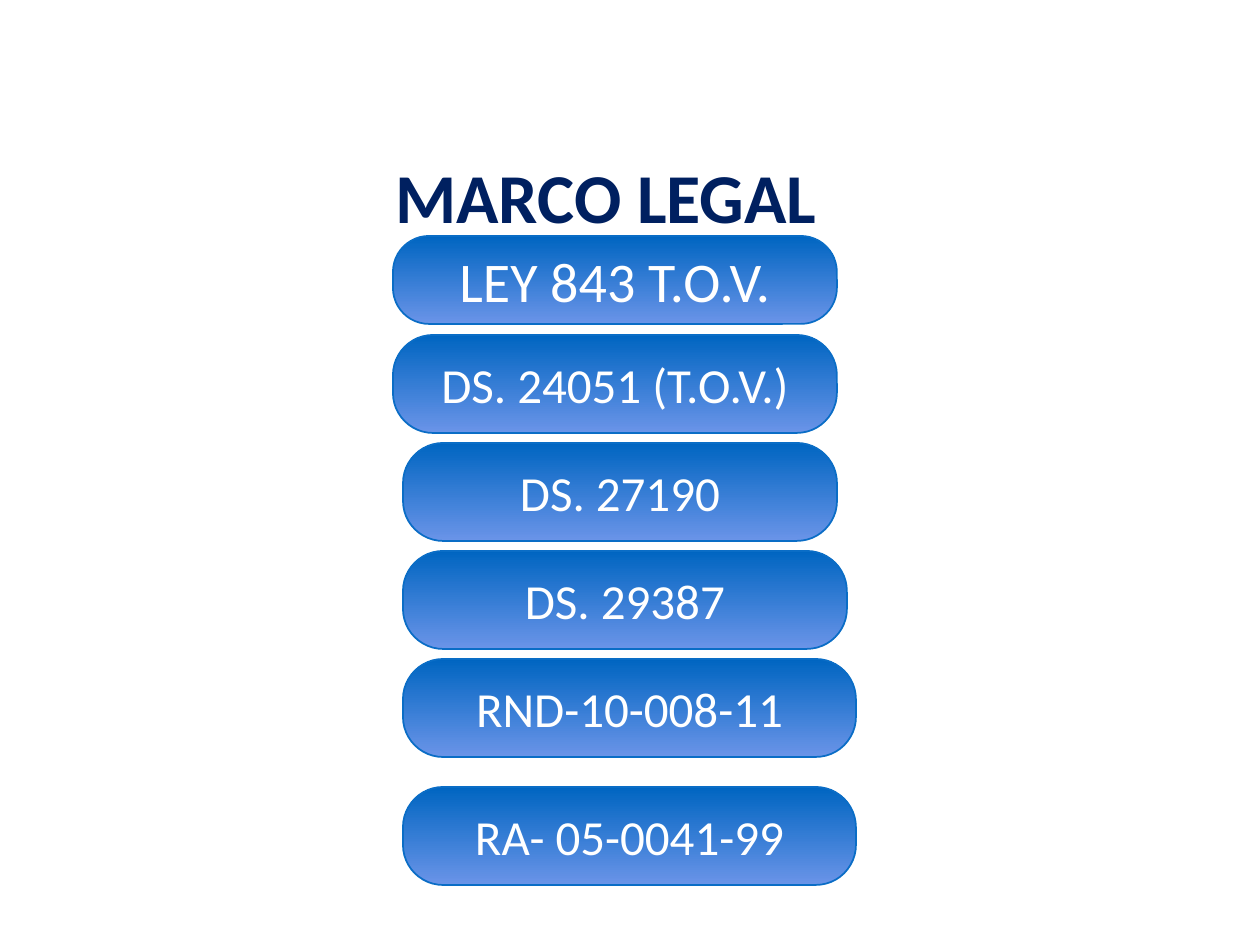
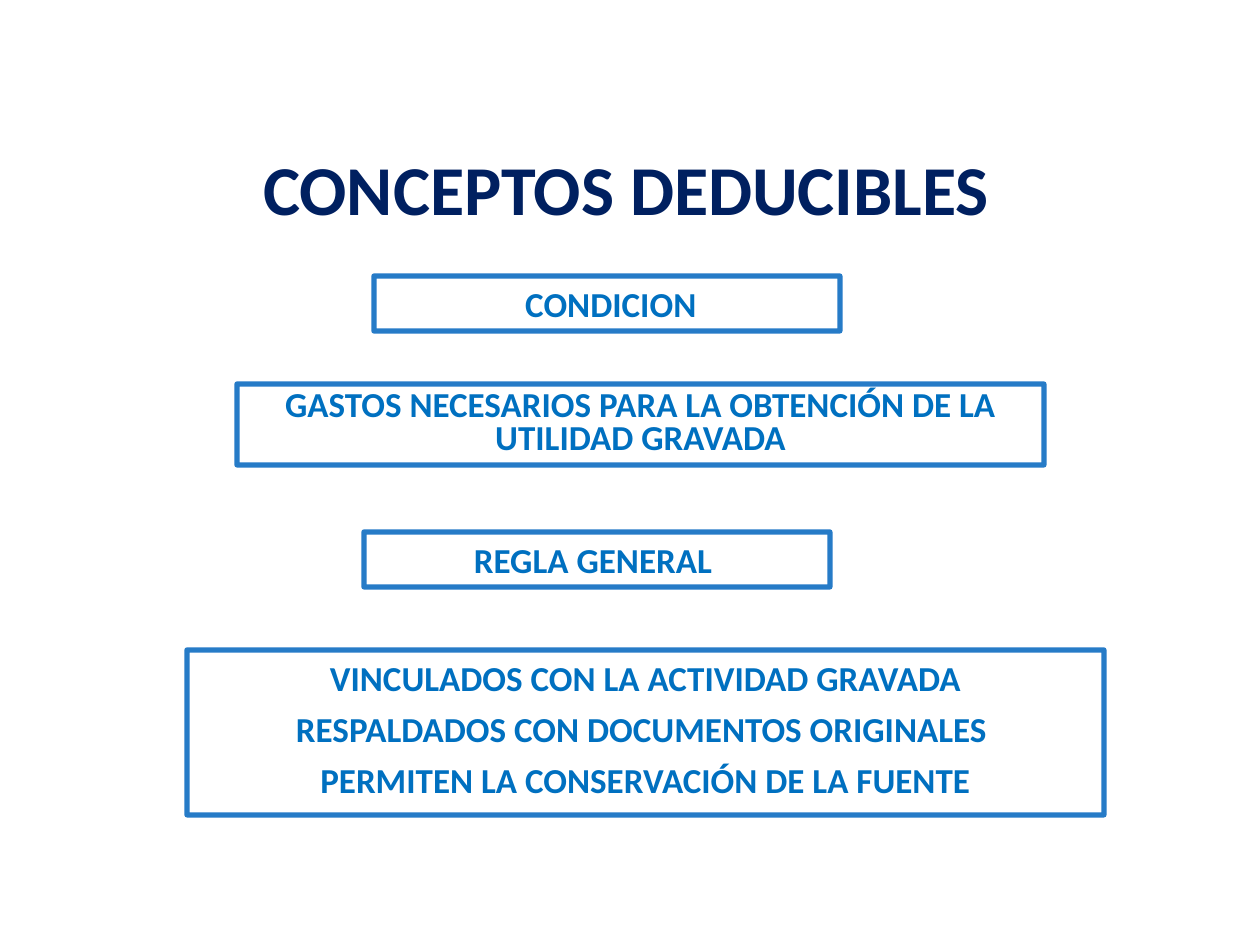
from pptx import Presentation
from pptx import util as u
from pptx.dml.color import RGBColor
from pptx.enum import shapes, text
from pptx.oxml.ns import qn
from lxml import etree

PX = 914400 / 126
FONT = "Calibri"
WHITE = "FFFFFF"
NAVY = "002060"
TEXT_BLUE = "0070C0"
FRAME_BLUE = "0F6DC2"
PILL_EDGE = "0A6DC6"
PILL_GRADIENT = ("6A94E8", "0065C1")


def px(length):
    return u.Emu(round(length * PX))


def color(value):
    return RGBColor.from_string(value)


class Deck:
    def __init__(self):
        self.presentation = Presentation()
        self.presentation.slide_width = px(1260)
        self.presentation.slide_height = px(945)
        self.slide = None

    def new_slide(self):
        layout = self.presentation.slide_layouts[6]
        self.slide = self.presentation.slides.add_slide(layout)

    def set_text(self, shape, lines, size, ink, bold=False, wrap=True,
                 anchor=text.MSO_ANCHOR.TOP):
        frame = shape.text_frame
        frame.text = "\n".join(lines)
        frame.word_wrap = wrap
        frame.vertical_anchor = anchor
        for paragraph in frame.paragraphs:
            paragraph.alignment = text.PP_ALIGN.CENTER
            for run in paragraph.runs:
                run.font.name = FONT
                run.font.size = u.Pt(size)
                run.font.bold = bold
                run.font.color.rgb = color(ink)
        return frame.paragraphs

    def add_box(self, kind, left, top, width, height, edge, weight):
        shape = self.slide.shapes.add_shape(
            kind, px(left), px(top), px(width), px(height))
        shape.shadow.inherit = False
        shape.line.color.rgb = color(edge)
        shape.line.width = u.Pt(weight)
        return shape

    def title(self, title, left, top, width):
        shape = self.slide.shapes.add_textbox(
            px(left), px(top), px(width), px(97))
        self.set_text(shape, [title], 40, NAVY, bold=True)

    def pill(self, label, left, top, width, height=98, size=28):
        shape = self.add_box(shapes.MSO_SHAPE.ROUNDED_RECTANGLE,
                             left, top, width, height, PILL_EDGE, 1)
        shape.adjustments[0] = 0.41
        shape.fill.gradient()
        shape.fill.gradient_angle = 90
        for position, stop in enumerate(shape.fill.gradient_stops):
            stop.position = position
            stop.color.rgb = color(PILL_GRADIENT[position])
        self.set_text(shape, [label], size, WHITE, wrap=False,
                      anchor=text.MSO_ANCHOR.MIDDLE)

    def frame(self, lines, left, top, width, height, tight_from=1):
        shape = self.add_box(shapes.MSO_SHAPE.RECTANGLE,
                             left, top, width, height, FRAME_BLUE, 3)
        shape.fill.solid()
        shape.fill.fore_color.rgb = color(WHITE)
        edge = shape.element.spPr.find(
            "/".join(qn(tag) for tag in ("a:ln", "a:solidFill", "a:srgbClr")))
        etree.SubElement(edge, qn("a:alpha")).set("val", "90000")
        paragraphs = self.set_text(shape, lines, 20, TEXT_BLUE, bold=True)
        for paragraph in paragraphs[tight_from:]:
            paragraph.line_spacing = 0.8
        for paragraph in paragraphs[1:]:
            paragraph.space_before = u.Pt(10)


def legal_framework(deck):
    deck.new_slide()
    deck.pill("LEY 843 T.O.V.", 393, 236, 444, height=88, size=32)
    deck.title("MARCO LEGAL", 335, 147, 542)
    decrees = [
        ("DS. 24051 (T.O.V.)", 393, 444),
        ("DS. 27190", 403, 434),
        ("DS. 29387", 403, 444),
        ("RND-10-008-11", 403, 453),
    ]
    for row, (label, left, width) in enumerate(decrees):
        deck.pill(label, left, 335 + 108 * row, width)
    deck.pill("RA- 05-0041-99", 403, 787, 453)


def deductible_items(deck):
    deck.new_slide()
    deck.frame(["REGLA GENERAL "], 364, 532, 466, 55)
    deck.frame(["GASTOS NECESARIOS PARA LA OBTENCIÓN DE LA UTILIDAD GRAVADA"],
               237, 384, 807, 81, tight_from=0)
    deck.frame([" CONDICION"], 374, 276, 466, 55)
    deck.frame(["VINCULADOS CON LA ACTIVIDAD GRAVADA",
                "RESPALDADOS CON DOCUMENTOS ORIGINALES ",
                "PERMITEN LA CONSERVACIÓN DE LA FUENTE"],
               187, 650, 917, 165)
    deck.title("CONCEPTOS DEDUCIBLES", 227, 139, 798)


def main():
    deck = Deck()
    legal_framework(deck)
    deductible_items(deck)
    deck.presentation.save("out.pptx")


if __name__ == "__main__":
    main()
